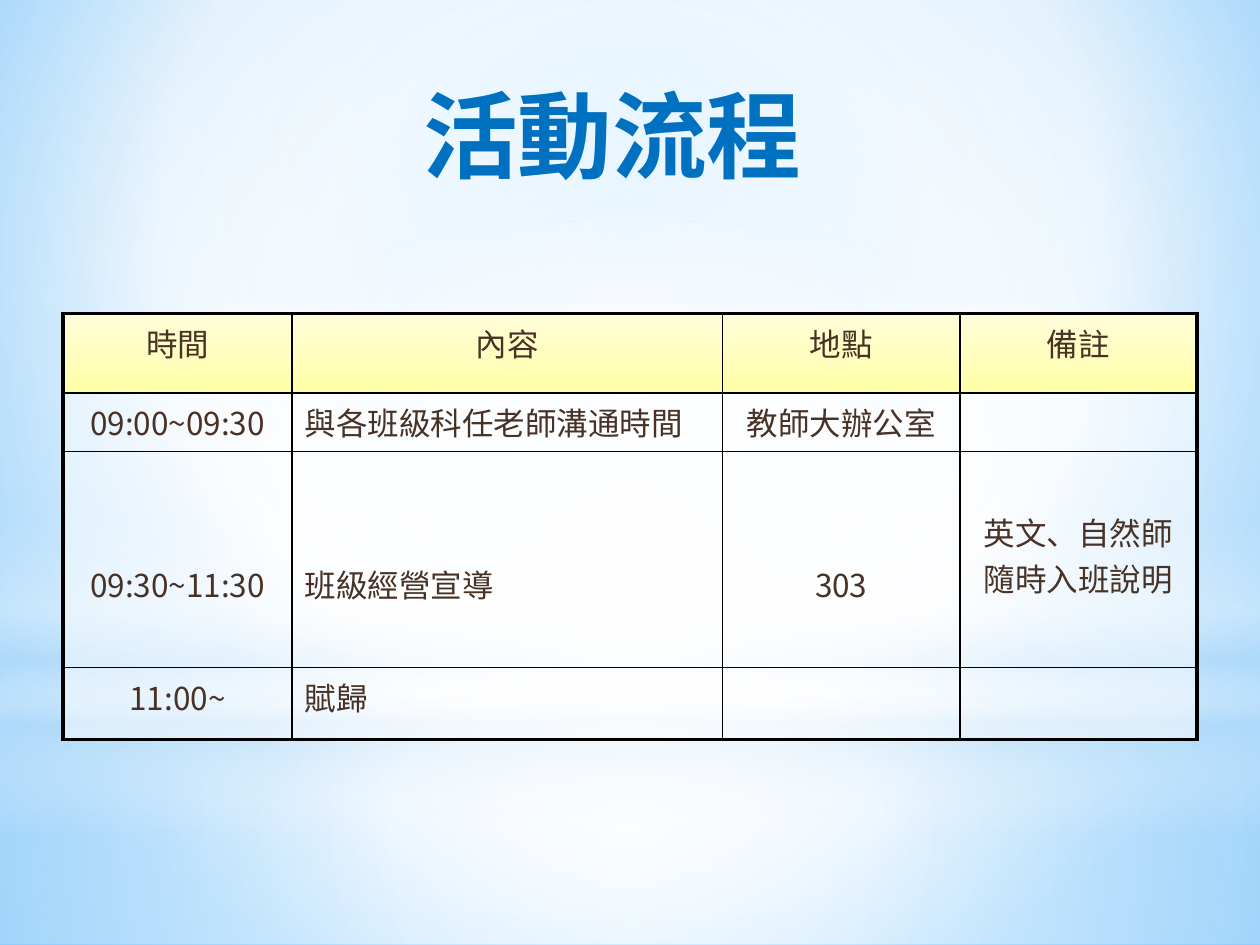
"""Build the activity schedule slide with its title, soft backdrop and timetable."""
from dataclasses import dataclass

from lxml.etree import SubElement
from pptx import Presentation
from pptx.dml.color import RGBColor as RGB
from pptx.enum.shapes import MSO_SHAPE as Preset
from pptx.enum.text import MSO_ANCHOR as Anchor, PP_ALIGN as Align
from pptx.oxml.ns import qn
from pptx.util import Pt


@dataclass(frozen=True)
class Theme:
    font: str = "Noto Sans CJK SC"
    title_size: float = 54
    body_size: float = 18
    title: str = "0070C0"
    ink: str = "483226"
    rule: str = "000000"
    white: str = "FFFFFF"
    sky: str = "B4DCFA"
    glow: str = "9ED5FF"
    edge: str = "5BB9FF"
    header_top: str = "FFFDD9"
    header_bottom: str = "FFFFA7"
    outer_rule: float = 2.25
    inner_rule: float = 1


class ScheduleSlide:
    def __init__(self, deck, theme):
        self.theme = theme
        self.slide = deck.slides.add_slide(deck.slide_layouts[6])

    def color(self, parent, value, opacity=100):
        node = SubElement(parent, qn("a:srgbClr"), val=value)
        if opacity < 100:
            SubElement(node, qn("a:alpha"), val=str(opacity * 1000))

    def gradient(self, fill, owner, stops, focus=None):
        fill.gradient()
        grad = next(owner.iter(qn("a:gradFill")))
        for child in list(grad):
            grad.remove(child)
        stop_list = SubElement(grad, qn("a:gsLst"))
        for position, *tint in stops:
            stop = SubElement(stop_list, qn("a:gs"), pos=str(position * 1000))
            self.color(stop, *tint)
        if focus:
            circle = SubElement(grad, qn("a:path"), path="circle")
            sides = {side: str(share * 1000) for side, share in zip("ltrb", focus)}
            SubElement(circle, qn("a:fillToRect"), **sides)
        else:
            SubElement(grad, qn("a:lin"), ang="5400000", scaled="0")

    def background(self, stops, focus):
        self.gradient(self.slide.background.fill, self.slide._element, stops, focus)

    def veil(self, preset, top, height, stops, focus=None):
        veil = self.slide.shapes.add_shape(preset, 0, Pt(top), Pt(720), Pt(height))
        veil.shadow.inherit = False
        veil.line.fill.background()
        self.gradient(veil.fill, veil._element, stops, focus)

    def text(self, paragraph, wording, size, color, align, bold=False):
        paragraph.text = wording
        paragraph.alignment = align
        font = paragraph.font
        font.name, font.size, font.bold = self.theme.font, Pt(size), bold
        font.color.rgb = RGB.from_string(color)
        defaults = next(paragraph._p.iter(qn("a:defRPr")))
        SubElement(defaults, qn("a:ea"), typeface=self.theme.font)

    def title(self, wording, left, top, width, height):
        box = self.slide.shapes.add_textbox(Pt(left), Pt(top), Pt(width), Pt(height))
        frame = box.text_frame
        frame.word_wrap = True
        frame.vertical_anchor = Anchor.TOP
        frame.margin_top = Pt(2.5)
        heading = frame.paragraphs[0]
        self.text(heading, wording, self.theme.title_size, self.theme.title,
                  Align.CENTER, bold=True)
        heading.line_spacing = 0.9

    def border(self, cell, side, weight):
        line = SubElement(cell._tc.get_or_add_tcPr(), qn(f"a:ln{side}"), w=str(Pt(weight)))
        self.color(SubElement(line, qn("a:solidFill")), self.theme.rule)

    def cell(self, cell, wording, outer_sides, is_header, align, drop):
        theme = self.theme
        cell.margin_top = Pt(3.6 + drop)
        for side in "LRTB":
            weight = theme.outer_rule if side in outer_sides else theme.inner_rule
            self.border(cell, side, weight)
        if is_header:
            self.gradient(cell.fill, cell._tc,
                          [(0, theme.header_top), (100, theme.header_bottom)])
        else:
            cell.fill.solid()
            cell.fill.fore_color.rgb = RGB.from_string(theme.white)
            tint = next(cell._tc.tcPr.iterchildren(qn("a:solidFill")))[0]
            SubElement(tint, qn("a:alpha"), val="50000")
        if wording:
            self.text(cell.text_frame.paragraphs[0], wording,
                      theme.body_size, theme.ink, align)

    def timetable(self, left, top, widths, heights, rows, drops):
        frame = self.slide.shapes.add_table(
            len(rows), len(widths), Pt(left), Pt(top), Pt(sum(widths)), Pt(sum(heights)))
        table = frame.table
        table.first_row = table.horz_banding = False
        for column, width in zip(table.columns, widths):
            column.width = Pt(width)
        for row, height in zip(table.rows, heights):
            row.height = Pt(height)
        last_row, last_column = len(rows) - 1, len(widths) - 1
        for r, entries in enumerate(rows):
            for c, wording in enumerate(entries):
                outer = {"T": r == 0, "B": r == last_row, "L": c == 0, "R": c == last_column}
                sides = [side for side, is_outer in outer.items() if is_outer]
                align = Align.LEFT if c == 1 and r else Align.CENTER
                self.cell(table.cell(r, c), wording, sides, r == 0, align,
                          drops.get((r, c), 0))


def main():
    deck = Presentation()
    deck.slide_width, deck.slide_height = Pt(720), Pt(540)
    theme = Theme()
    page = ScheduleSlide(deck, theme)
    white, sky = theme.white, theme.sky
    center = (50, 50, 50, 50)

    page.background([(0, theme.glow), (60, white), (100, theme.edge)], (20, 10, 20, 60))
    page.veil(Preset.RECTANGLE, 402, 138,
              [(0, white, 91), (37, white, 76), (100, sky, 79)], center)
    page.veil(Preset.RECTANGLE, 0, 402,
              [(0, white, 89), (48, white, 62), (100, sky, 79)], center)
    page.veil(Preset.RECTANGLE, 296.5, 180,
              [(0, white, 0), (29, white, 30), (45, sky, 40),
               (55, white, 26), (65, sky, 60), (100, white, 0)])
    page.veil(Preset.OVAL, 126, 402, [(0, white), (56, white, 0)], center)

    page.title("活動流程", 93.5, 49, 513, 90)
    schedule = [
        ("時間", "內容", "地點", "備註"),
        ("09:00~09:30", "與各班級科任老師溝通時間", "教師大辦公室", ""),
        ("09:30~11:30", "班級經營宣導", "303", "英文、自然師隨時入班說明"),
        ("11:00~", "賦歸", "", ""),
    ]
    page.timetable(36, 179, (131, 246, 135.5, 135.5), (45.5, 33.5, 123.5, 41), schedule,
                   {(2, 0): 59, (2, 1): 59, (2, 2): 59, (2, 3): 29.5})
    deck.save("out.pptx")


if __name__ == "__main__":
    main()
